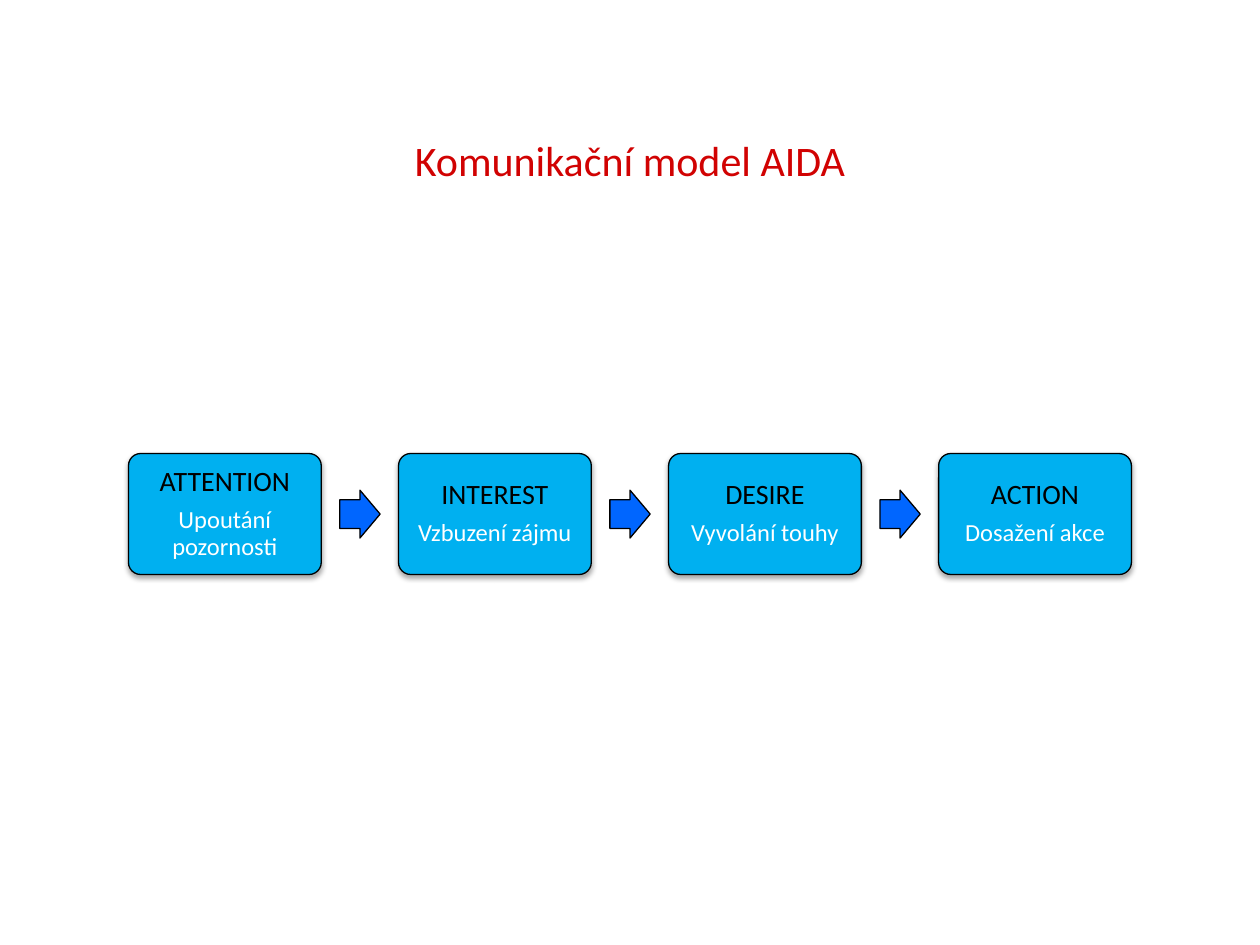
from dataclasses import dataclass

from lxml import etree
from pptx import Presentation
from pptx import util as u
from pptx.dml.color import RGBColor
from pptx.enum import shapes, text
from pptx.oxml import ns

# Content
TITLE = "Komunikační model AIDA"
STAGES = [
    ("ATTENTION", "Upoutání pozornosti"),
    ("INTEREST", "Vzbuzení zájmu"),
    ("DESIRE", "Vyvolání touhy"),
    ("ACTION", "Dosažení akce"),
]


@dataclass(frozen=True)
class Theme:
    font: str = "Calibri"
    title: str = "D10202"
    box: str = "00B0F0"
    arrow: str = "0066FF"
    dark: str = "000000"
    light: str = "FFFFFF"
    title_size: int = 24
    stage_size: int = 16
    note_size: int = 14


THEME = Theme()

# Layout in inches: equal boxes across the row, an arrow centred in each gap
SLIDE_W, SLIDE_H = 10, 7.5
ROW_LEFT, ROW_RIGHT, ROW_MIDDLE = 1.02, 8.98, 4.08
BOX_W, BOX_H = 1.53, 0.96
ARROW_W, ARROW_H = 0.32, 0.38
PITCH = (ROW_RIGHT - ROW_LEFT - BOX_W) / (len(STAGES) - 1)
GAP = PITCH - BOX_W


def write(paragraph, words, *, size, color, line=None, after=0):
    paragraph.alignment = text.PP_ALIGN.CENTER
    paragraph.space_before = u.Pt(0)
    paragraph.space_after = u.Pt(after)
    if line:
        paragraph.line_spacing = line
    run = paragraph.add_run()
    run.text = words
    run.font.name = THEME.font
    run.font.size = u.Pt(size)
    run.font.color.rgb = RGBColor.from_string(color)


def add_figure(parent, kind, left, width, height, fill, adjustments):
    figure = parent.add_shape(kind, u.Inches(left), u.Inches(ROW_MIDDLE - height / 2),
                              u.Inches(width), u.Inches(height))
    for i, value in enumerate(adjustments):
        figure.adjustments[i] = value
    figure.shadow.inherit = False
    figure.fill.solid()
    figure.fill.fore_color.rgb = RGBColor.from_string(fill)
    figure.line.color.rgb = RGBColor.from_string(THEME.dark)
    figure.line.width = u.Pt(0.75)
    return figure


def add_shadow(figure):
    effects = figure.element.spPr.find(ns.qn("a:effectLst"))
    shadow = etree.SubElement(effects, ns.qn("a:outerShdw"), blurRad=str(u.Pt(3.1)),
                              dist=str(u.Pt(1.8)), dir="5400000", rotWithShape="0")
    color = etree.SubElement(shadow, ns.qn("a:srgbClr"), val=THEME.dark)
    etree.SubElement(color, ns.qn("a:alpha"), val="35000")


def add_stage(parent, left, name, note):
    box = add_figure(parent, shapes.MSO_SHAPE.ROUNDED_RECTANGLE, left, BOX_W, BOX_H,
                     THEME.box, [0.1])
    add_shadow(box)
    frame = box.text_frame
    frame.word_wrap = True
    frame.vertical_anchor = text.MSO_ANCHOR.MIDDLE
    frame.margin_left = frame.margin_right = u.Inches(0.1)
    frame.margin_top = frame.margin_bottom = u.Inches(0.1)
    write(frame.paragraphs[0], name, size=THEME.stage_size, color=THEME.dark,
          line=0.9, after=0.35 * THEME.stage_size)
    write(frame.add_paragraph(), note, size=THEME.note_size, color=THEME.light, line=0.9)


def main():
    prs = Presentation()
    prs.slide_width, prs.slide_height = u.Inches(SLIDE_W), u.Inches(SLIDE_H)
    slide = prs.slides.add_slide(prs.slide_layouts[5])

    # Title
    title = slide.shapes.title
    title.left, title.top = u.Inches(0.5), u.Inches(0.87)
    title.width, title.height = u.Inches(SLIDE_W - 1), u.Inches(0.8)
    title.text_frame.vertical_anchor = text.MSO_ANCHOR.MIDDLE
    write(title.text_frame.paragraphs[0], TITLE, size=THEME.title_size, color=THEME.title)

    # Process row
    process = slide.shapes.add_group_shape().shapes
    for i, (name, note) in enumerate(STAGES):
        left = ROW_LEFT + i * PITCH
        if i:
            add_figure(process, shapes.MSO_SHAPE.RIGHT_ARROW, left - (GAP + ARROW_W) / 2,
                       ARROW_W, ARROW_H, THEME.arrow, [0.6, 0.5])
        add_stage(process, left, name, note)

    prs.save("out.pptx")


if __name__ == "__main__":
    main()
